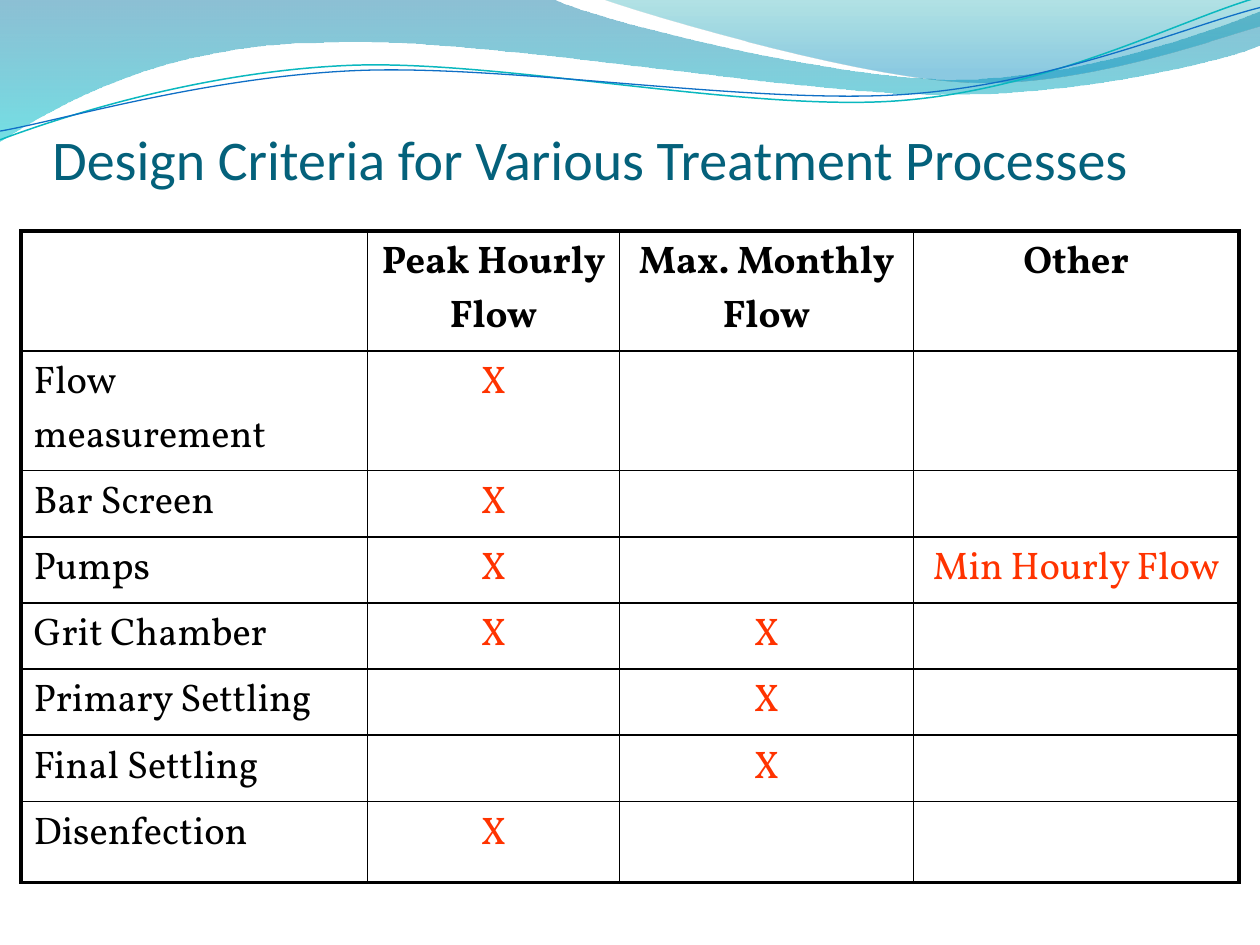
from lxml.etree import SubElement
from pptx import Presentation
from pptx.dml.color import RGBColor as RGB
from pptx.enum.text import MSO_ANCHOR as Anchor, PP_ALIGN as Align
from pptx.oxml.ns import qn
from pptx.util import Pt

THEME = {
    "title": ("Calibri", 32, "04617B"),
    "body": ("Vollkorn", 22, "000000"),
    "mark": ("Vollkorn", 22, "FF3300"),
    "border": "000000",
    "inner": 1,
    "outer": 2.25,
}

TITLE = "Design Criteria for Various Treatment Processes"
ROWS = [
    ("", "Peak Hourly Flow", "Max. Monthly Flow", "Other"),
    ("Flow measurement", "X", "", ""),
    ("Bar Screen", "X", "", ""),
    ("Pumps", "X", "", "Min Hourly Flow"),
    ("Grit Chamber", "X", "X", ""),
    ("Primary Settling", "", "X", ""),
    ("Final Settling", "", "X", ""),
    ("Disenfection", "X", "", ""),
]
WIDTHS = [198, 144, 168, 186]
HEIGHTS = [68.5] * 2 + [37.8] * 5 + [46.5]

BANDS = [
    (
        [(0, 0), (316.8, 0),
         (342.7, 12.2, 478.1, 45.4, 545.8, 45.4),
         (614.2, 45.4, 689.8, 18.7, 720, 6.5), (720, 25.9),
         (707.8, 31.7, 626.4, 54.7, 537.1, 54),
         (447.8, 54, 275, 20.2, 185, 24.5),
         (92.9, 25.2, 33.1, 59.8, 0, 81)],
        [(0, "0074A1", 45), (1, "00C6CF", 55)],
    ),
    (
        [(344.9, 0), (366.5, 7.9, 491, 44.6, 553.7, 46.8),
         (616.3, 49.7, 691.9, 23, 720, 15.1), (720, 0)],
        [(0, "00A1A9", 30), (0.8, "008BBF", 45)],
    ),
]
WAVES = [
    (
        [(0, 79.9), (34.6, 67, 113.8, 41, 199.4, 37.4),
         (284.4, 33.8, 427, 64.1, 513.4, 57.6),
         (599.8, 51.1, 675.4, 10.8, 718.6, -1.4)],
        "0AB8BF", 0.85,
    ),
    (
        [(0, 74.9), (33.8, 69.1, 118.1, 43.9, 203.8, 40.3),
         (290.2, 36.7, 429.8, 59.8, 516.2, 54),
         (601.9, 48.2, 677.5, 15.1, 720, 4.3)],
        "0F6FC6", 0.75,
    ),
]


def bend(shape, outline):
    segments = iter(list(shape._element.spPr.iter(qn("a:lnTo"))))
    for part in outline[1:]:
        curve = next(segments)
        if len(part) == 6:
            curve.tag = qn("a:cubicBezTo")
            for segment in (next(segments), next(segments)):
                curve.append(segment[0])
                segment.getparent().remove(segment)


def add_outline(page, outline, close):
    points = [
        (Pt(part[i]), Pt(part[i + 1])) for part in outline for i in range(0, len(part), 2)
    ]
    builder = page.shapes.build_freeform(*points[0])
    builder.add_line_segments(points[1:], close=close)
    shape = builder.convert_to_shape()
    shape.shadow.inherit = False
    bend(shape, outline)
    return shape


def add_band(page, outline, stops):
    band = add_outline(page, outline, True)
    band.line.fill.background()
    band.fill.gradient()
    band.fill.gradient_angle = 270
    for stop, (position, color, _) in zip(band.fill.gradient_stops, stops):
        stop.position = position
        stop.color.rgb = RGB.from_string(color)
    colors = band._element.spPr.iter(qn("a:srgbClr"))
    for node, (_, _, opacity) in zip(list(colors), stops):
        SubElement(node, qn("a:alpha"), val=str(opacity * 1000))


def add_wave(page, outline, color, width):
    wave = add_outline(page, outline, False)
    wave.fill.background()
    wave.line.color.rgb = RGB.from_string(color)
    wave.line.width = Pt(width)


def write(para, text, style, bold=False, align=Align.LEFT):
    name, size, color = THEME[style]
    para.text = text
    para.alignment = align
    font = para.font
    font.name, font.size, font.bold = name, Pt(size), bold
    font.color.rgb = RGB.from_string(color)


def add_title(page):
    box = page.shapes.add_textbox(Pt(30), Pt(48), Pt(648), Pt(61.5))
    frame = box.text_frame
    frame.word_wrap = True
    frame.vertical_anchor = Anchor.BOTTOM
    frame.margin_left = frame.margin_right = frame.margin_bottom = 0
    frame.margin_top = Pt(3.6)
    write(frame.paragraphs[0], TITLE, "title")


def set_borders(cell, outer_sides):
    props = cell._tc.get_or_add_tcPr()
    for side, is_outer in outer_sides.items():
        width = THEME["outer" if is_outer else "inner"]
        line = SubElement(props, qn(f"a:ln{side}"), w=str(Pt(width)))
        SubElement(SubElement(line, qn("a:solidFill")), qn("a:srgbClr"), val=THEME["border"])


def add_criteria(page):
    frame = page.shapes.add_table(
        len(ROWS), len(WIDTHS), Pt(12), Pt(132), Pt(sum(WIDTHS)), Pt(sum(HEIGHTS))
    )
    table = frame.table
    table.first_row = table.horz_banding = False
    for column, width in zip(table.columns, WIDTHS):
        column.width = Pt(width)
    for row, height in zip(table.rows, HEIGHTS):
        row.height = Pt(height)
    for r, texts in enumerate(ROWS):
        for c, text in enumerate(texts):
            cell = table.cell(r, c)
            set_borders(cell, {
                "L": c == 0, "R": c == len(WIDTHS) - 1,
                "T": r == 0, "B": r == len(ROWS) - 1,
            })
            cell.fill.background()
            write(
                cell.text_frame.paragraphs[0], text,
                "mark" if r and c else "body",
                bold=r == 0, align=Align.CENTER if c else Align.LEFT,
            )


def main():
    """Build the treatment design criteria slide."""
    deck = Presentation()
    deck.slide_width, deck.slide_height = Pt(720), Pt(540)
    page = deck.slides.add_slide(deck.slide_layouts[6])
    for band in BANDS:
        add_band(page, *band)
    for wave in WAVES:
        add_wave(page, *wave)
    add_title(page)
    add_criteria(page)
    deck.save("out.pptx")


if __name__ == "__main__":
    main()
